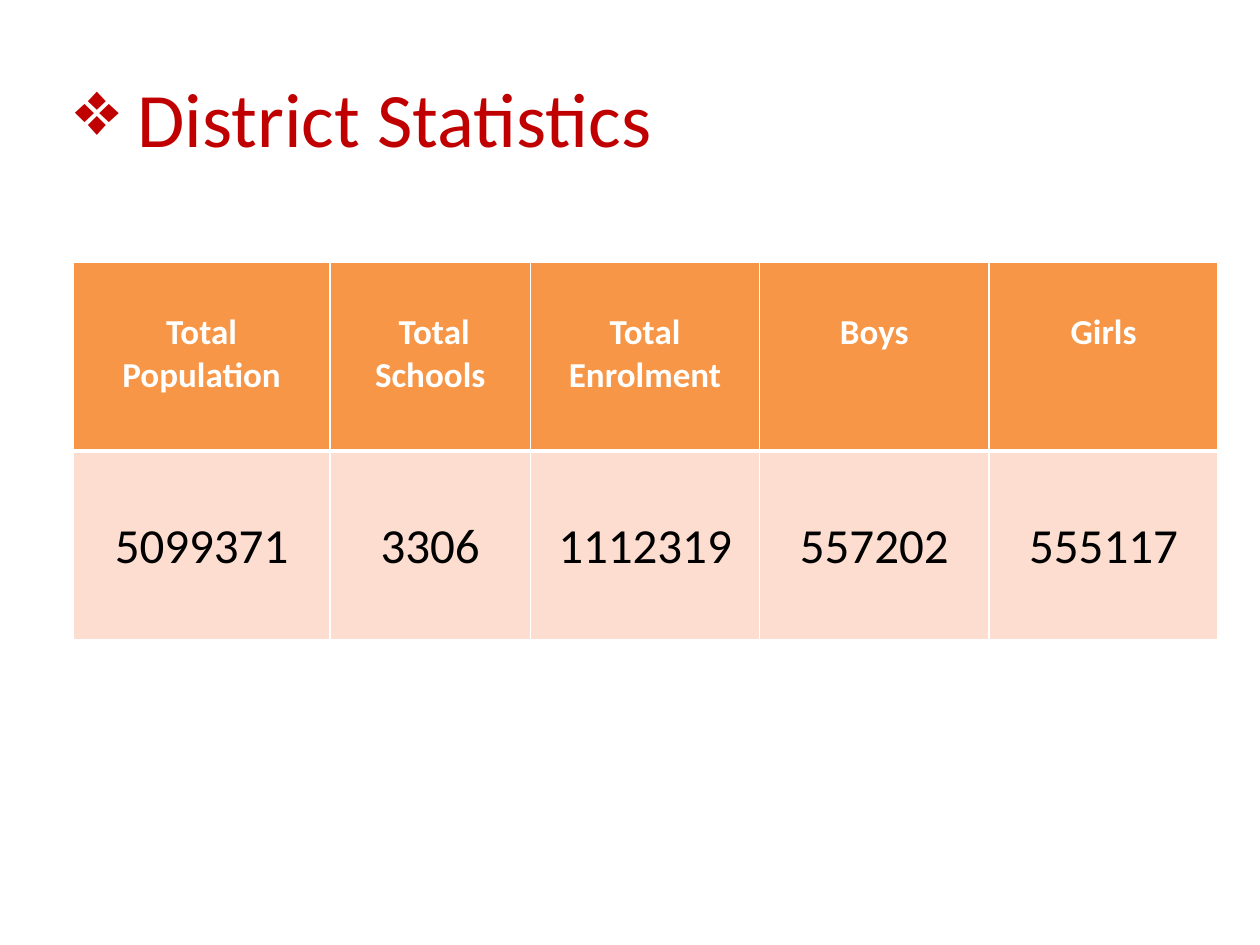
"""Build the District Statistics slide."""
from pptx import Presentation
from pptx.dml.color import RGBColor as Rgb
from pptx.enum.text import MSO_ANCHOR as Anchor, PP_ALIGN as Align
from pptx.oxml import parse_xml
from pptx.oxml.ns import nsdecls
from pptx.util import Inches, Pt

RED = Rgb(0xC0, 0x00, 0x00)
ORANGE = Rgb(0xF7, 0x96, 0x46)
PEACH = Rgb(0xFC, 0xDD, 0xCF)
WHITE = Rgb(0xFF, 0xFF, 0xFF)
BLACK = Rgb(0x00, 0x00, 0x00)
FONT = "Calibri"
HEADS = ["Total Population", " Total Schools", "Total Enrolment", "Boys", "Girls"]
DATA = ["5099371", "3306", "1112319", "557202", "555117"]
WIDTHS = [2.04, 1.59, 1.82, 1.82, 1.82]


def style(run, size, color, bold=False, name=FONT):
    font = run.font
    font.size, font.name, font.bold = Pt(size), name, bold
    font.color.rgb = color


def add_title(slide):
    box = slide.shapes.add_textbox(Inches(0.5), Inches(0.3), Inches(9), Inches(1.25))
    frame = box.text_frame
    frame.word_wrap = True
    frame.vertical_anchor = Anchor.MIDDLE
    para = frame.paragraphs[0]
    for text, name in ((" ", "Roboto Condensed"), ("District Statistics", FONT)):
        run = para.add_run()
        run.text = text
        style(run, 44, RED, name=name)
    props = para._p.get_or_add_pPr()
    props.append(parse_xml(f'<a:buChar {nsdecls("a")} char="❖"/>'))


def set_edges(cell, top, bottom):
    props = cell._tc.get_or_add_tcPr()
    for side, width in (("L", 1), ("R", 1), ("T", top), ("B", bottom)):
        props.append(parse_xml(
            f'<a:ln{side} {nsdecls("a")} w="{Pt(width)}"><a:solidFill>'
            f'<a:srgbClr val="{WHITE}"/></a:solidFill></a:ln{side}>'))


def fill_row(row, texts, size, color, back, bold, drop, edges):
    for cell, text in zip(row.cells, texts):
        set_edges(cell, *edges)
        cell.fill.solid()
        cell.fill.fore_color.rgb = back
        cell.margin_top = Inches(drop)
        cell.text_frame.text = text
        para = cell.text_frame.paragraphs[0]
        para.alignment = Align.CENTER
        style(para.runs[0], size, color, bold)


def add_stats(slide):
    table = slide.shapes.add_table(2, len(HEADS), Inches(0.58), Inches(2.08),
                                   Inches(sum(WIDTHS)), Inches(3)).table
    for col, width in zip(table.columns, WIDTHS):
        col.width = Inches(width)
    head, data = table.rows
    fill_row(head, HEADS, 20, WHITE, ORANGE, True, 0.39, (1, 3))
    fill_row(data, DATA, 28, BLACK, PEACH, False, 0.52, (3, 1))


def main():
    deck = Presentation()
    deck.slide_width, deck.slide_height = Inches(10), Inches(7.5)
    slide = deck.slides.add_slide(deck.slide_layouts[6])
    add_title(slide)
    add_stats(slide)
    deck.save("out.pptx")


if __name__ == "__main__":
    main()
